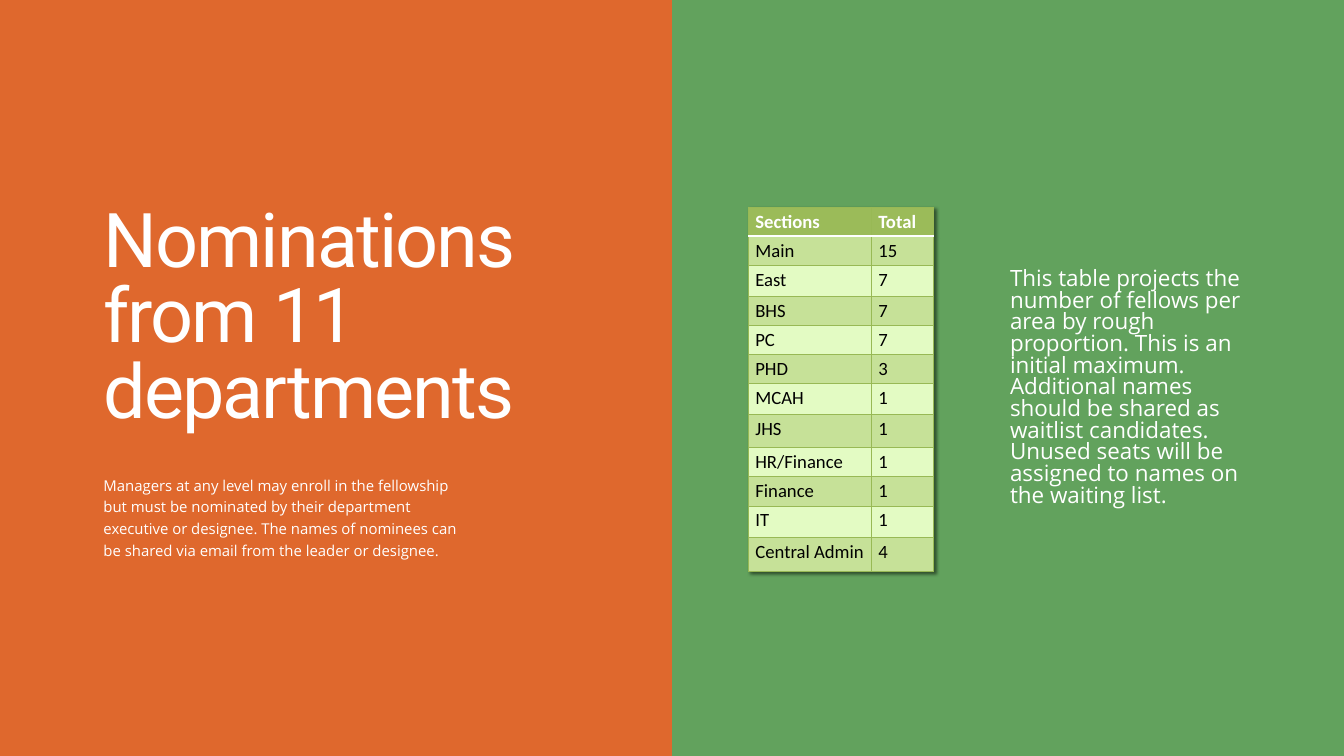
import pptx
import pptx.dml.color
import pptx.enum.shapes
import pptx.enum.text
import pptx.oxml
import pptx.oxml.ns
import pptx.util

Pt = pptx.util.Pt
RGBColor = pptx.dml.color.RGBColor

ORANGE = RGBColor(0xDF, 0x68, 0x2D)
GREEN = RGBColor(0x62, 0xA2, 0x5D)
WHITE = RGBColor(0xFF, 0xFF, 0xFF)
BLACK = RGBColor(0, 0, 0)
HEADER_GREEN = RGBColor(0x9B, 0xBB, 0x59)
DARK_BAND = RGBColor(0xC6, 0xE1, 0x98)
LIGHT_BAND = RGBColor(0xE3, 0xFB, 0xC3)
BORDER_GREEN = RGBColor(0x98, 0xB9, 0x55)

TITLE = "Nominations from 11 departments"
INTRO = (
    "Managers at any level may enroll in the fellowship but must be nominated "
    "by their department executive or designee. The names of nominees can be "
    "shared via email from the leader or designee."
)
TABLE_NOTE = (
    "This table projects the number of fellows per area by rough proportion. "
    "This is an initial maximum. Additional names should be shared as waitlist "
    "candidates. Unused seats will be assigned to names on the waiting list."
)
SECTIONS = [
    ("Sections", "Total", 31),
    ("Main", "15", 31),
    ("East", "7", 33.1),
    ("BHS", "7", 31),
    ("PC", "7", 31),
    ("PHD", "3", 31),
    ("MCAH", "1", 32.4),
    ("JHS", "1", 36),
    ("HR/Finance", "1", 31),
    ("Finance", "1", 31),
    ("IT", "1", 33.8),
    ("Central Admin", "4", 36),
]
COLUMN_WIDTHS = (131.8, 66.2)


def apply_format(target, values):
    for name, value in values.items():
        setattr(target, name, value)


def write_span(para, text, size, face, color, bold=False):
    span = para.add_run()
    span.text = text
    apply_format(span.font, {"size": Pt(size), "name": face, "bold": bold})
    span.font.color.rgb = color
    return span


def add_text(page, box, text, size, face, leading, tracking=0):
    shape = page.shapes.add_textbox(*map(Pt, box))
    apply_format(shape.text_frame, {
        "word_wrap": True,
        "auto_size": pptx.enum.text.MSO_AUTO_SIZE.SHAPE_TO_FIT_TEXT,
        "margin_left": 0, "margin_top": 0, "margin_right": 0, "margin_bottom": 0,
    })
    para = shape.text_frame.paragraphs[0]
    para.line_spacing = Pt(leading)
    span = write_span(para, text, size, face, WHITE)
    if tracking:
        span.font._element.set("spc", str(tracking * 100))


def set_borders(cell, borders):
    properties = cell._tc.get_or_add_tcPr()
    for place, (side, color, width) in enumerate(borders):
        properties.insert(place, pptx.oxml.parse_xml(
            f'<a:ln{side} {pptx.oxml.ns.nsdecls("a")} w="{Pt(width)}">'
            f'<a:solidFill><a:srgbClr val="{color}"/></a:solidFill></a:ln{side}>'
        ))


def add_table_shadow(table):
    table._tbl.tblPr.insert(0, pptx.oxml.parse_xml(
        f'<a:effectLst {pptx.oxml.ns.nsdecls("a")}>'
        f'<a:outerShdw blurRad="{Pt(4)}" dist="{Pt(3)}" dir="2700000" '
        'algn="tl" rotWithShape="0"><a:srgbClr val="000000">'
        '<a:alpha val="50000"/></a:srgbClr></a:outerShdw></a:effectLst>'
    ))


def fill_cell(cell, text, row):
    header = row == 0
    cell.fill.solid()
    cell.fill.fore_color.rgb = (
        HEADER_GREEN if header else DARK_BAND if row % 2 else LIGHT_BAND
    )
    write_span(cell.text_frame.paragraphs[0], text, 20, "Calibri",
               WHITE if header else BLACK, header)
    top = ("T", WHITE, 2) if row == 1 else ("T", BORDER_GREEN, 0.75)
    bottom = ("B", WHITE, 2) if header else ("B", BORDER_GREEN, 0.75)
    set_borders(cell, [("L", BORDER_GREEN, 0.75), ("R", BORDER_GREEN, 0.75),
                       top, bottom])


def add_sections_table(page, left, top):
    height = sum(row[2] for row in SECTIONS)
    table = page.shapes.add_table(
        len(SECTIONS), len(COLUMN_WIDTHS), Pt(left), Pt(top),
        Pt(sum(COLUMN_WIDTHS)), Pt(height)).table
    add_table_shadow(table)
    for column, width in zip(table.columns, COLUMN_WIDTHS):
        column.width = Pt(width)
    for row, (section, total, row_height) in enumerate(SECTIONS):
        table.rows[row].height = Pt(row_height)
        for column, text in enumerate((section, total)):
            fill_cell(table.cell(row, column), text, row)


def add_title_panel(page, left, top, width, height):
    panel = page.shapes.add_shape(
        pptx.enum.shapes.MSO_SHAPE.RECTANGLE,
        Pt(left), Pt(top), Pt(width), Pt(height))
    panel.shadow.inherit = False
    panel.fill.solid()
    panel.fill.fore_color.rgb = ORANGE
    panel.line.fill.background()
    add_text(page, (left + 110.9, top + 506.2, 380.9, 91.4),
             INTRO, 16, "Open Sans", 23.2)
    add_text(page, (left + 110.9, top + 221.8, 449.3, 249.1),
             TITLE, 80.9, "Roboto", 80.9, -2)


def add_table_panel(page, left, top):
    add_sections_table(page, left + 82.1, top + 221.8)
    add_text(page, (left + 362.2, top + 288.7, 247, 255.6),
             TABLE_NOTE, 24, "Open Sans", 23.2)


def main():
    deck = pptx.Presentation()
    apply_format(deck, {"slide_width": Pt(1440), "slide_height": Pt(810)})
    page = deck.slides.add_slide(deck.slide_layouts[6])
    page.background.fill.solid()
    page.background.fill.fore_color.rgb = GREEN
    add_title_panel(page, 0, 0, 720, 810)
    add_table_panel(page, 720, 0)
    deck.save("out.pptx")


if __name__ == "__main__":
    main()
